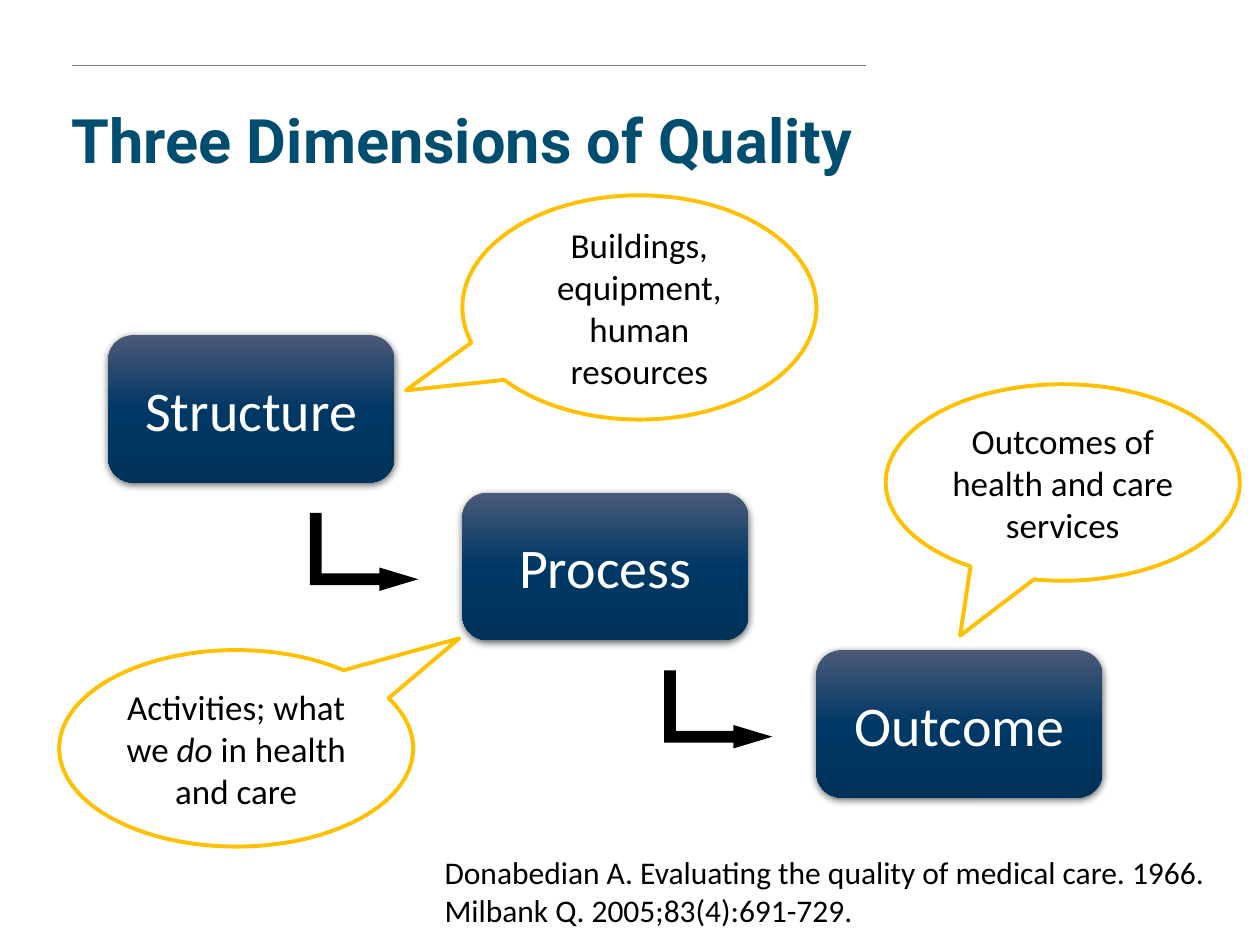
from lxml import etree
from pptx import Presentation
from pptx.dml.color import RGBColor
from pptx.enum.shapes import MSO_CONNECTOR, MSO_SHAPE
from pptx.enum.text import MSO_ANCHOR, PP_ALIGN
from pptx.oxml.ns import qn
from pptx.util import Inches, Pt

ROUNDED = MSO_SHAPE.ROUNDED_RECTANGLE
ARROW = MSO_SHAPE.BENT_UP_ARROW
CALLOUT = MSO_SHAPE.OVAL_CALLOUT
RECTANGLE = MSO_SHAPE.RECTANGLE
STRAIGHT = MSO_CONNECTOR.STRAIGHT
TOP, MIDDLE = MSO_ANCHOR.TOP, MSO_ANCHOR.MIDDLE
LEFT, CENTER = PP_ALIGN.LEFT, PP_ALIGN.CENTER

STEP_X, STEP_Y = 2.81, 1.25
STAGES = ["Structure", "Process", "Outcome"]
GRADIENT = [(0, "4B5A78"), (50, "003865"), (100, "00325A")]
CALLOUTS = [
    ((3.67, 1.55, 2.81, 1.78), (-0.66, 0.37),
     ["Buildings, equipment, human resources"]),
    ((7.03, 3.05, 2.81, 1.56), (-0.29, 0.78),
     ["Outcomes of health and care services"]),
    ((0.47, 5.16, 2.81, 1.56), (0.63, -0.56),
     ["Activities; what we ", "do", " in health and care"]),
]


def color(value):
    """Turn a hex string into a colour."""
    return RGBColor.from_string(value)


def add_child(parent, tag, **attributes):
    """Append a DrawingML element and return it."""
    child = etree.SubElement(parent, qn(tag))
    for name, value in attributes.items():
        child.set(name, str(value))
    return child


def add_color(parent, value):
    """Append a hex colour element and return it."""
    return add_child(parent, "a:srgbClr", val=value)


def add_shape(page, kind, area, fill=None, line=None, adjustments=()):
    """Add a flat preset shape with optional fill and outline."""
    shape = page.shapes.add_shape(kind, *map(Inches, area))
    shape.shadow.inherit = False
    for index, value in enumerate(adjustments):
        shape.adjustments[index] = value
    if fill:
        shape.fill.solid()
        shape.fill.fore_color.rgb = color(fill)
    else:
        shape.fill.background()
    if line:
        shape.line.color.rgb = color(line)
        shape.line.width = Pt(2.25)
    else:
        shape.line.fill.background()
    return shape


def write(shape, parts, size, ink="000000", align=CENTER, anchor=MIDDLE, face="Calibri"):
    """Write one paragraph into a shape and return it."""
    frame = shape.text_frame
    frame.word_wrap = True
    frame.vertical_anchor = anchor
    para = frame.paragraphs[0]
    para.alignment = align
    para.font.name = face
    para.font.size = Pt(size)
    para.font.color.rgb = color(ink)
    for part in parts:
        para.add_run().text = part
    return para


def shade(shape):
    """Give a shape the vertical gradient and the soft shadow below."""
    shape.fill.gradient()
    shape.fill.gradient_angle = 270
    properties = shape._element.spPr
    stops = properties.find(".//" + qn("a:gsLst"))
    for stop in list(stops):
        stops.remove(stop)
    for position, value in GRADIENT:
        add_color(add_child(stops, "a:gs", pos=position * 1000), value)
    shadow = add_child(properties.find(qn("a:effectLst")), "a:outerShdw",
                       blurRad=Pt(4.5), dist=Pt(1.5), dir=5400000, rotWithShape=0)
    add_child(add_color(shadow, "000000"), "a:alpha", val=63000)


def add_stage(page, index, name):
    """Add one stage of the descending staircase."""
    area = (0.86 + index * STEP_X, 2.66 + index * STEP_Y, 2.27, 1.17)
    box = add_shape(page, ROUNDED, area, adjustments=[0.17])
    shade(box)
    write(box, [name], 32, "FFFFFF")


def add_step_arrow(page, index):
    """Add the bent arrow from one stage to the next."""
    area = (2.58 + index * STEP_X, 3.95 + index * STEP_Y, 0.62, 0.86)
    arrow = add_shape(page, ARROW, area, "000000", adjustments=[0.15, 0.15, 0.5])
    arrow.rotation = 90


def add_callout(page, area, tip, parts):
    """Add an oval callout, with a second part in italics."""
    callout = add_shape(page, CALLOUT, area, line="FFC000", adjustments=tip)
    para = write(callout, parts, 20)
    for span in para.runs[1:2]:
        span.font.italic = True


def add_rule(page):
    """Add the thin line above the title."""
    rule = page.shapes.add_connector(
        STRAIGHT, Inches(0.57), Inches(0.52), Inches(6.87), Inches(0.52))
    rule.line.color.rgb = color("787878")
    rule.line.width = Pt(0.75)
    add_child(rule._element.spPr, "a:effectLst")


def add_title(page, text):
    """Add the bold slide title."""
    box = page.shapes.add_textbox(*map(Inches, (0.47, 0.83, 7.23, 0.83)))
    para = write(box, [text], 35, "004E6F", LEFT, TOP, "Roboto")
    para.font.bold = True
    para.line_spacing = 0.9


def add_citation(page, text):
    """Add the reference at the foot of the slide."""
    box = add_shape(page, RECTANGLE, (3.43, 6.72, 6.57, 0.71), "FFFFFF")
    write(box, [text], 18, align=LEFT, anchor=TOP)


def main():
    """Build and save the slide."""
    deck = Presentation()
    deck.slide_width, deck.slide_height = Inches(10), Inches(7.5)
    page = deck.slides.add_slide(deck.slide_layouts[6])
    add_rule(page)
    for index, name in enumerate(STAGES):
        add_stage(page, index, name)
    for index in range(len(STAGES) - 1):
        add_step_arrow(page, index)
    for area, tip, parts in CALLOUTS:
        add_callout(page, area, tip, parts)
    add_citation(page, "Donabedian A. Evaluating the quality of medical care. 1966. "
                       "Milbank Q. 2005;83(4):691-729.")
    add_title(page, "Three Dimensions of Quality")
    deck.save("out.pptx")


if __name__ == "__main__":
    main()
